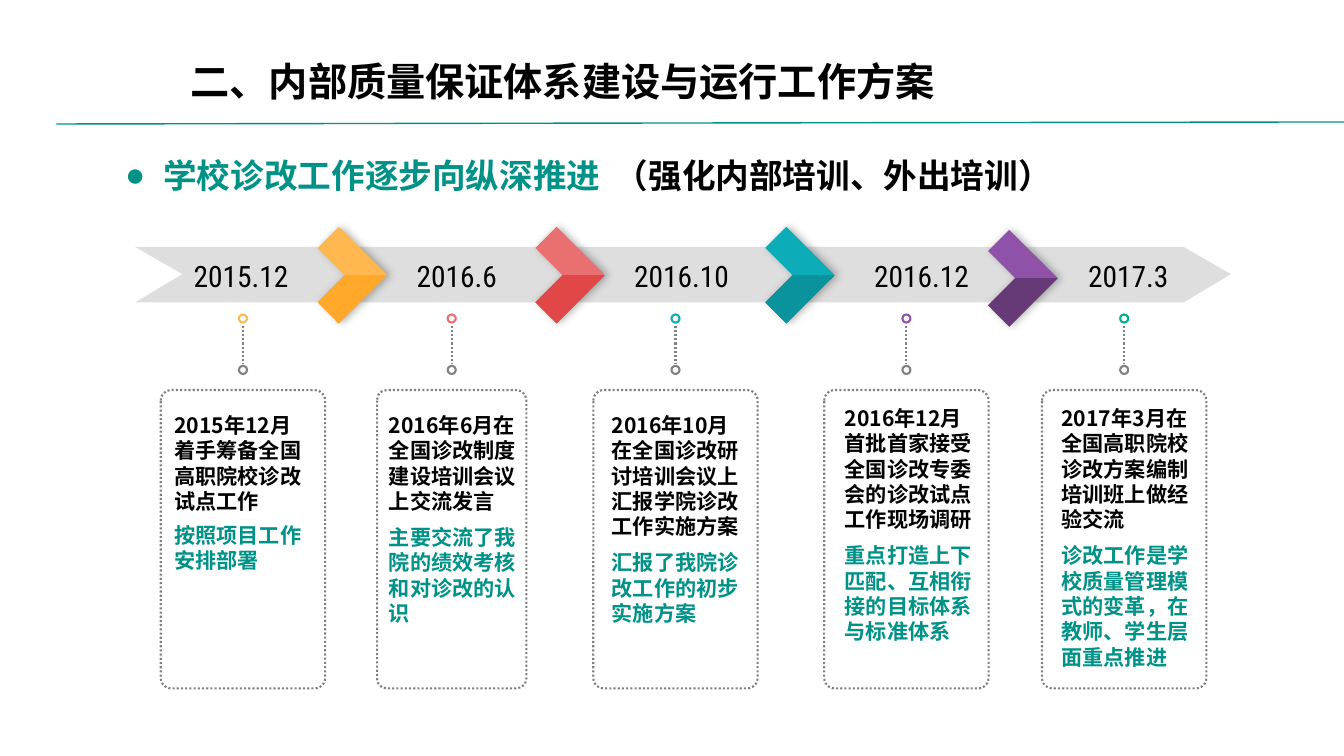
from lxml.etree import SubElement
from pptx import Presentation
from pptx.dml.color import RGBColor
from pptx.enum.dml import MSO_LINE
from pptx.enum.shapes import MSO_CONNECTOR, MSO_SHAPE
from pptx.enum.text import MSO_ANCHOR, MSO_AUTO_SIZE, PP_ALIGN
from pptx.oxml.ns import qn
from pptx.util import Inches, Pt

BLACK = RGBColor(0x00, 0x00, 0x00)
GRAY = RGBColor(0x80, 0x80, 0x80)
BAND = RGBColor(0xBF, 0xBF, 0xBF)
TEAL = RGBColor(0x00, 0x92, 0x87)
YELLOW = RGBColor(0xFF, 0xB8, 0x50)
ORANGE = RGBColor(0xFF, 0xA8, 0x29)
CORAL = RGBColor(0xE8, 0x70, 0x71)
RED = RGBColor(0xE1, 0x47, 0x47)
CYAN = RGBColor(0x0D, 0xAC, 0xB9)
DARK_CYAN = RGBColor(0x0B, 0x93, 0x9D)
VIOLET = RGBColor(0x8F, 0x52, 0xA8)
DARK_VIOLET = RGBColor(0x66, 0x3A, 0x77)
GREEN = RGBColor(0x00, 0xAF, 0x92)
CJK_FONT = "Noto Sans CJK SC"
DATE_FONT = "Roboto Condensed"

# Content
TITLE = "二、内部质量保证体系建设与运行工作方案"
# text, colour, letter spacing in points
HEADING = [
    ("学校诊改工作逐步向纵深推进", TEAL, 0),
    (" ", TEAL, 5),
    ("（强化内部培训、外出培训）", BLACK, 0),
]
# date, event, remark, pin colour
STEPS = [
    ("2015.12", "2015年12月着手筹备全国高职院校诊改试点工作",
     "按照项目工作安排部署", YELLOW),
    ("2016.6", "2016年6月在全国诊改制度建设培训会议上交流发言",
     "主要交流了我院的绩效考核和对诊改的认识", CORAL),
    ("2016.10", "2016年10月在全国诊改研讨培训会议上汇报学院诊改工作实施方案",
     "汇报了我院诊改工作的初步实施方案", CYAN),
    ("2016.12", "2016年12月首批首家接受全国诊改专委会的诊改试点工作现场调研",
     "重点打造上下匹配、互相衔接的目标体系与标准体系", VIOLET),
    ("2017.3", "2017年3月在全国高职院校诊改方案编制培训班上做经验交流",
     "诊改工作是学校质量管理模式的变革，在教师、学生层面重点推进", GREEN),
]
# column centre, date centre, card width, note left, note top, note width, remark gap
COLUMNS = [
    (2.41, 2.39, 1.63, 1.63, 4.04, 1.55, 6),
    (4.48, 4.53, 1.48, 3.76, 4.04, 1.46, 7.5),
    (6.7, 6.76, 1.63, 5.97, 4.04, 1.5, 7.5),
    (8.99, 9.14, 1.63, 8.28, 3.97, 1.5, 7.5),
    (11.15, 11.19, 1.63, 10.43, 3.97, 1.5, 7.5),
]
# left, top, upper colour, lower colour
CHEVRONS = [
    (3.15, 2.25, YELLOW, ORANGE),
    (5.31, 2.25, CORAL, RED),
    (7.59, 2.25, CYAN, DARK_CYAN),
    (9.8, 2.28, VIOLET, DARK_VIOLET),
]
CHEVRON_OUTLINE = [(0, 0.21), (0.21, 0), (0.69, 0.48), (0.21, 0.96), (0, 0.75), (0.27, 0.48)]
BAND_OUTLINE = [(1.34, 2.45), (11.74, 2.45), (12.21, 2.72), (11.74, 3), (1.34, 3), (1.81, 2.72)]
CARD_TOP, CARD_HEIGHT = 3.87, 2.96
PIN_SIZE, PIN_TOPS, STEM = 0.08, (3.12, 3.63), (3.23, 3.61)

presentation = Presentation()
presentation.slide_width, presentation.slide_height = Inches(13.33), Inches(7.5)
slide = presentation.slides.add_slide(presentation.slide_layouts[1])
shapes = slide.shapes


def place(shape, left, top, width, height):
    shape.left, shape.top = Inches(left), Inches(top)
    shape.width, shape.height = Inches(width), Inches(height)


def add_run(paragraph, text, size, color, font=CJK_FONT, bold=True, spacing=0):
    run = paragraph.add_run()
    run.text = text
    run.font.size, run.font.bold, run.font.name = Pt(size), bold, font
    run.font.color.rgb = color
    properties = run._r.get_or_add_rPr()
    properties.set("lang", "zh-CN")
    if spacing:
        properties.set("spc", str(spacing * 100))
    SubElement(properties, qn("a:ea")).set("typeface", font)


def format_placeholder(shape, *box):
    place(shape, *box)
    frame = shape.text_frame
    frame.auto_size, frame.word_wrap = MSO_AUTO_SIZE.NONE, True
    frame.vertical_anchor = MSO_ANCHOR.MIDDLE
    paragraph = frame.paragraphs[0]
    paragraph.alignment, paragraph.space_before = PP_ALIGN.LEFT, Pt(0)
    return paragraph


def add_text_box(*box):
    shape = shapes.add_textbox(0, 0, 0, 0)
    place(shape, *box)
    shape.text_frame.word_wrap = True
    return shape.text_frame


def add_outlined(kind, color, *box):
    shape = shapes.add_shape(kind, 0, 0, 0, 0)
    place(shape, *box)
    shape.shadow.inherit = False
    shape.fill.background()
    shape.line.color.rgb, shape.line.width = color, Pt(1.5)
    return shape


def add_line(start, end, color, width):
    line = shapes.add_connector(MSO_CONNECTOR.STRAIGHT, *map(Inches, start + end))
    line.line.color.rgb, line.line.width = color, Pt(width)
    SubElement(line._element.spPr, qn("a:effectLst"))
    return line


def add_outline(points, left=0, top=0):
    corners = [(Inches(left + x), Inches(top + y)) for x, y in points]
    builder = shapes.build_freeform(*corners[0])
    builder.add_line_segments(corners[1:], close=True)
    shape = builder.convert_to_shape()
    shape.shadow.inherit = False
    shape.line.fill.background()
    return shape


# Title, rule and heading
add_run(format_placeholder(shapes.title, 1.79, 0.3, 8.62, 1.01), TITLE, 28, BLACK)
add_line((0.56, 1.23), (13.33, 1.21), TEAL, 1)
heading = format_placeholder(slide.placeholders[1], 1.14, 1.23, 10.32, 1.01)
for text, color, spacing in HEADING:
    add_run(heading, text, 24, color, spacing=spacing)
heading_properties = heading._p.get_or_add_pPr()
heading_properties.set("marL", str(Inches(0.38)))
heading_properties.set("indent", str(Inches(-0.38)))
SubElement(heading_properties, qn("a:buChar")).set("char", "●")

# Gray arrow band
band = add_outline(BAND_OUTLINE)
band.fill.solid()
band.fill.fore_color.rgb = BAND
band_color = band._element.spPr.find(qn("a:solidFill"))[0]
SubElement(band_color, qn("a:alpha")).set("val", "50000")

# Two-tone chevrons with a soft shadow
for left, top, upper, lower in CHEVRONS:
    chevron = add_outline(CHEVRON_OUTLINE, left, top)
    chevron.fill.gradient()
    chevron.fill.gradient_angle = 270
    for stop, color in zip(chevron.fill.gradient_stops, (upper, lower)):
        stop.position, stop.color.rgb = 0.5, color
    effects = chevron._element.spPr.find(qn("a:effectLst"))
    shadow = SubElement(effects, qn("a:outerShdw"), blurRad=str(Pt(6)), dist=str(Pt(2)), dir="0")
    shadow_color = SubElement(shadow, qn("a:srgbClr"), val="000000")
    SubElement(shadow_color, qn("a:alpha")).set("val", "30000")

# Dates, pins and cards
for step, column in zip(STEPS, COLUMNS):
    date, event, remark, pin_color = step
    center, date_center, card_width, note_left, note_top, note_width, gap = column

    label = add_text_box(date_center - 0.66, 2.51, 1.32, 0.45).paragraphs[0]
    label.alignment = PP_ALIGN.CENTER
    add_run(label, date, 21, BLACK, DATE_FONT, False)

    for pin_top, color in zip(PIN_TOPS, (pin_color, GRAY)):
        add_outlined(MSO_SHAPE.OVAL, color, center - PIN_SIZE / 2, pin_top, PIN_SIZE, PIN_SIZE)
    stem = add_line((center, STEM[0]), (center, STEM[1]), GRAY, 1.5)
    card = add_outlined(MSO_SHAPE.ROUNDED_RECTANGLE, GRAY,
                        center - card_width / 2, CARD_TOP, card_width, CARD_HEIGHT)
    card.adjustments[0] = 0.064
    for dotted in (stem, card):
        dotted.line.dash_style = MSO_LINE.ROUND_DOT

    note = add_text_box(note_left, note_top, note_width, 2.6)
    for paragraph, text, color, space in ((note.paragraphs[0], event, BLACK, 0),
                                          (note.add_paragraph(), remark, TEAL, gap)):
        paragraph.space_before = Pt(space)
        add_run(paragraph, text, 15.1, color)

presentation.save("out.pptx")
